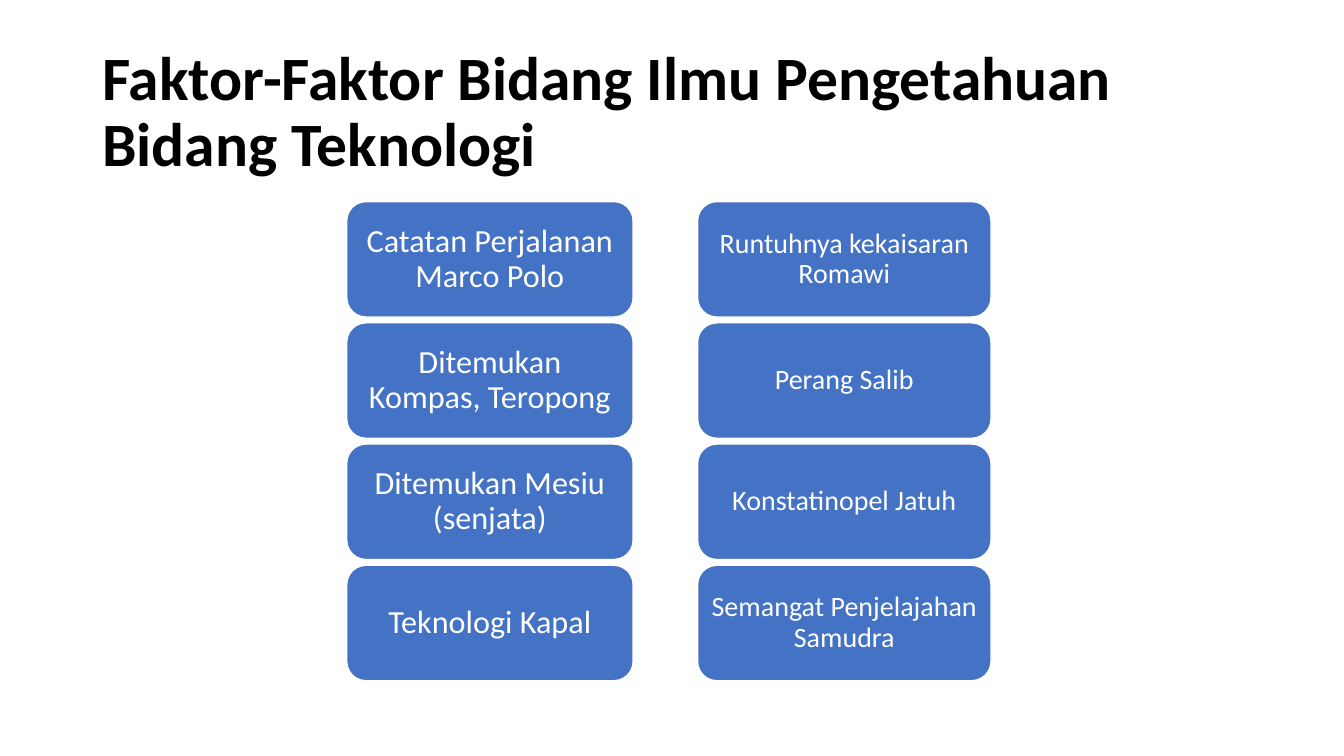
from dataclasses import dataclass

from pptx import Presentation
from pptx.dml.color import RGBColor
from pptx.enum import shapes, text
from pptx.util import Pt

COLORS = {"title": "000000", "box": "4472C4", "box_text": "FFFFFF", "outline": "FFFFFF"}
FONT = "Calibri"
BOX_TOP, BOX_HEIGHT, BOX_PITCH = 144, 82.5, 86.6


@dataclass
class Column:
    left: float
    width: float
    font_size: float
    margin: float
    labels: list[str]


COLUMNS = [
    Column(247.7, 204.6, 23, 6.9, [
        "Catatan Perjalanan Marco Polo",
        "Ditemukan Kompas, Teropong",
        "Ditemukan Mesiu (senjata)",
        "Teknologi Kapal",
    ]),
    Column(498.3, 209.6, 20, 6, [
        "Runtuhnya kekaisaran Romawi",
        "Perang Salib",
        "Konstatinopel Jatuh",
        "Semangat Penjelajahan Samudra",
    ]),
]


def color(name: str) -> RGBColor:
    return RGBColor.from_string(COLORS[name])


def write_text(shape, content: str, *, size: float, color_name: str, bold: bool = False,
               align=text.PP_ALIGN.LEFT, margin: float = 7.2) -> None:
    """Fill a shape with one middle-anchored paragraph; vertical margins are half of margin."""
    frame = shape.text_frame
    frame.word_wrap = True
    frame.vertical_anchor = text.MSO_ANCHOR.MIDDLE
    frame.margin_left = frame.margin_right = Pt(margin)
    frame.margin_top = frame.margin_bottom = Pt(margin / 2)
    paragraph = frame.paragraphs[0]
    paragraph.alignment = align
    paragraph.line_spacing = 0.9
    run = paragraph.add_run()
    run.text = content
    run.font.name = FONT
    run.font.size = Pt(size)
    run.font.bold = bold
    run.font.color.rgb = color(color_name)


def draw_column(slide, column: Column) -> None:
    group = slide.shapes.add_group_shape()
    for row, label in enumerate(column.labels):
        shape = group.shapes.add_shape(
            shapes.MSO_SHAPE.ROUNDED_RECTANGLE, Pt(column.left),
            Pt(BOX_TOP + row * BOX_PITCH), Pt(column.width), Pt(BOX_HEIGHT))
        shape.shadow.inherit = False
        shape.fill.solid()
        shape.fill.fore_color.rgb = color("box")
        shape.line.color.rgb = color("outline")
        shape.line.width = Pt(1)
        write_text(shape, label, size=column.font_size, color_name="box_text",
                   align=text.PP_ALIGN.CENTER, margin=column.margin)


def main() -> None:
    presentation = Presentation()
    presentation.slide_width, presentation.slide_height = Pt(960), Pt(540)
    slide = presentation.slides.add_slide(presentation.slide_layouts[6])
    title = slide.shapes.add_textbox(Pt(66), Pt(28.8), Pt(828), Pt(104.4))
    write_text(title, "Faktor-Faktor Bidang Ilmu Pengetahuan Bidang Teknologi",
               size=44, color_name="title", bold=True)
    for column in COLUMNS:
        draw_column(slide, column)
    presentation.save("out.pptx")


if __name__ == "__main__":
    main()
